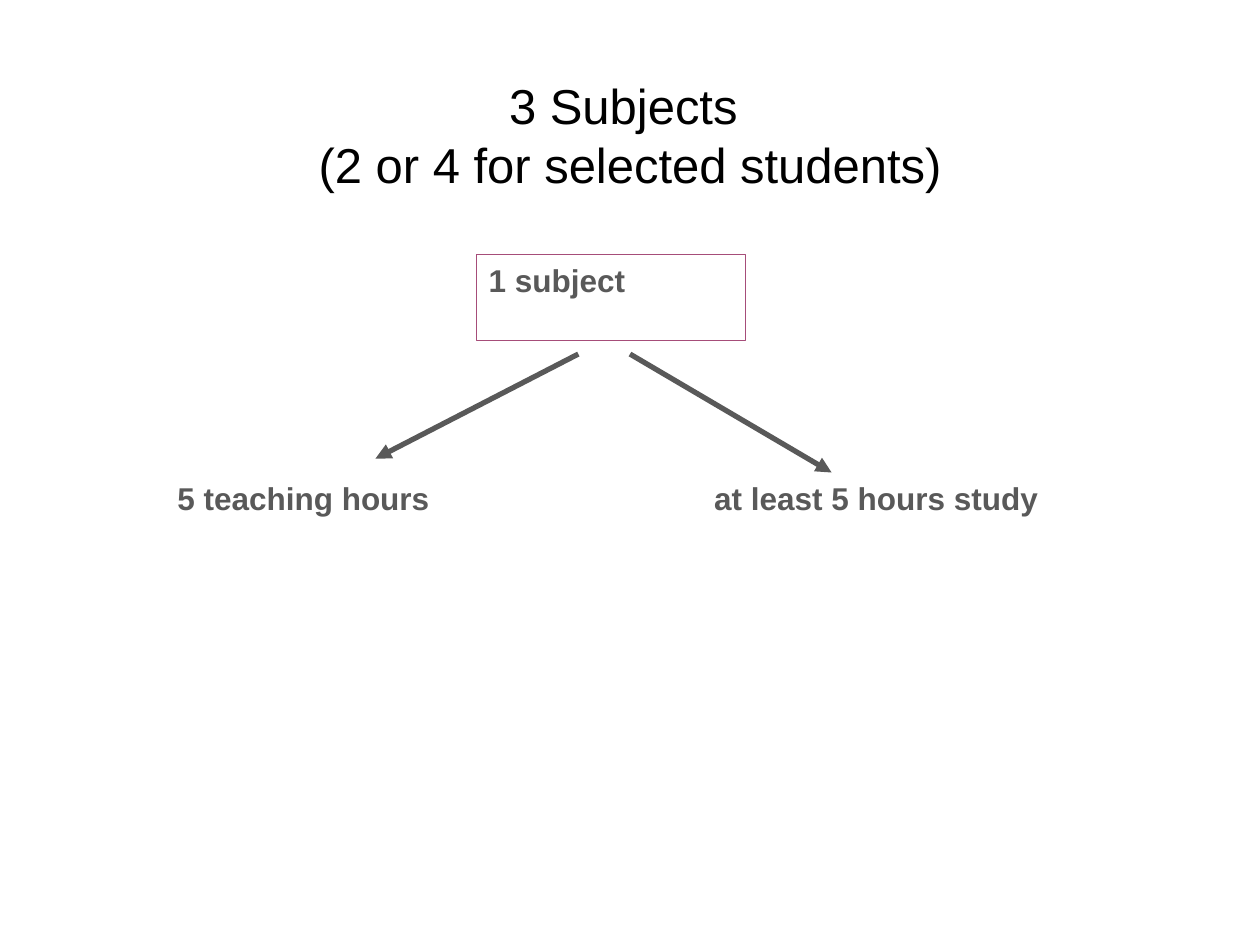
from lxml import etree
from pptx import Presentation
from pptx.dml.color import RGBColor
from pptx.enum.shapes import MSO_CONNECTOR, MSO_SHAPE
from pptx.enum.text import MSO_ANCHOR, PP_ALIGN
from pptx.oxml.ns import qn
from pptx.util import Inches, Pt

STRAIGHT = MSO_CONNECTOR.STRAIGHT
RECTANGLE = MSO_SHAPE.RECTANGLE
TOP, MIDDLE = MSO_ANCHOR.TOP, MSO_ANCHOR.MIDDLE
LEFT, CENTER = PP_ALIGN.LEFT, PP_ALIGN.CENTER
FONT = "Arial"
BLACK, GRAY, PLUM = "000000", "595959", "A64D79"
BRANCH_TOP = 3.75
BRANCH_SIZE = (2.85, 0.94)


def color(hex_value):
    """Return the colour for a hex string."""
    return RGBColor.from_string(hex_value)


def write(frame, text, size, hex_value, bold=False, align=LEFT, anchor=TOP, before=0):
    """Fill a text frame and format its paragraphs and runs."""
    frame.word_wrap = True
    frame.vertical_anchor = anchor
    frame.text = text
    for paragraph in frame.paragraphs:
        paragraph.alignment = align
        paragraph.space_before = Pt(before)
        for run in paragraph.runs:
            run.font.name = FONT
            run.font.size = Pt(size)
            run.font.bold = bold
            run.font.color.rgb = color(hex_value)


def add_title(slide, text):
    """Add the centred slide title."""
    title = slide.shapes.add_textbox(Inches(0.34), Inches(0.65), Inches(9.32), Inches(0.83))
    write(title.text_frame, text, 28, BLACK, align=CENTER, anchor=MIDDLE)


def add_subject(slide, text):
    """Add the outlined box that the branches start from."""
    subject = slide.shapes.add_shape(
        RECTANGLE, Inches(3.78), Inches(2.02), Inches(2.14), Inches(0.68)
    )
    subject.shadow.inherit = False
    subject.fill.background()
    subject.line.color.rgb = color(PLUM)
    subject.line.width = Pt(0.75)
    write(subject.text_frame, text, 18, GRAY, bold=True, before=6.4)


def add_arrow(slide, start, end):
    """Add a thick line with a triangular head at its end."""
    arrow = slide.shapes.add_connector(STRAIGHT, *map(Inches, start + end))
    arrow.line.color.rgb = color(GRAY)
    arrow.line.width = Pt(3)
    properties = arrow._element.spPr
    etree.SubElement(properties.find(qn("a:ln")), qn("a:tailEnd"), type="triangle")
    etree.SubElement(properties, qn("a:effectLst"))


def add_branch(slide, left, text):
    """Add the label at the end of a branch."""
    branch = slide.shapes.add_textbox(
        Inches(left), Inches(BRANCH_TOP), *map(Inches, BRANCH_SIZE)
    )
    write(branch.text_frame, text, 18, GRAY, bold=True, before=6.4)


def main():
    """Build the slide and save it."""
    presentation = Presentation()
    presentation.slide_width = Inches(10)
    presentation.slide_height = Inches(7.5)
    slide = presentation.slides.add_slide(presentation.slide_layouts[6])
    add_title(slide, "3 Subjects \n(2 or 4 for selected students)")
    add_subject(slide, "1 subject")
    add_arrow(slide, (4.59, 2.81), (2.98, 3.64))
    add_arrow(slide, (5, 2.81), (6.6, 3.75))
    add_branch(slide, 1.31, "5 teaching hours")
    add_branch(slide, 5.57, "at least 5 hours study")
    presentation.save("out.pptx")


if __name__ == "__main__":
    main()
